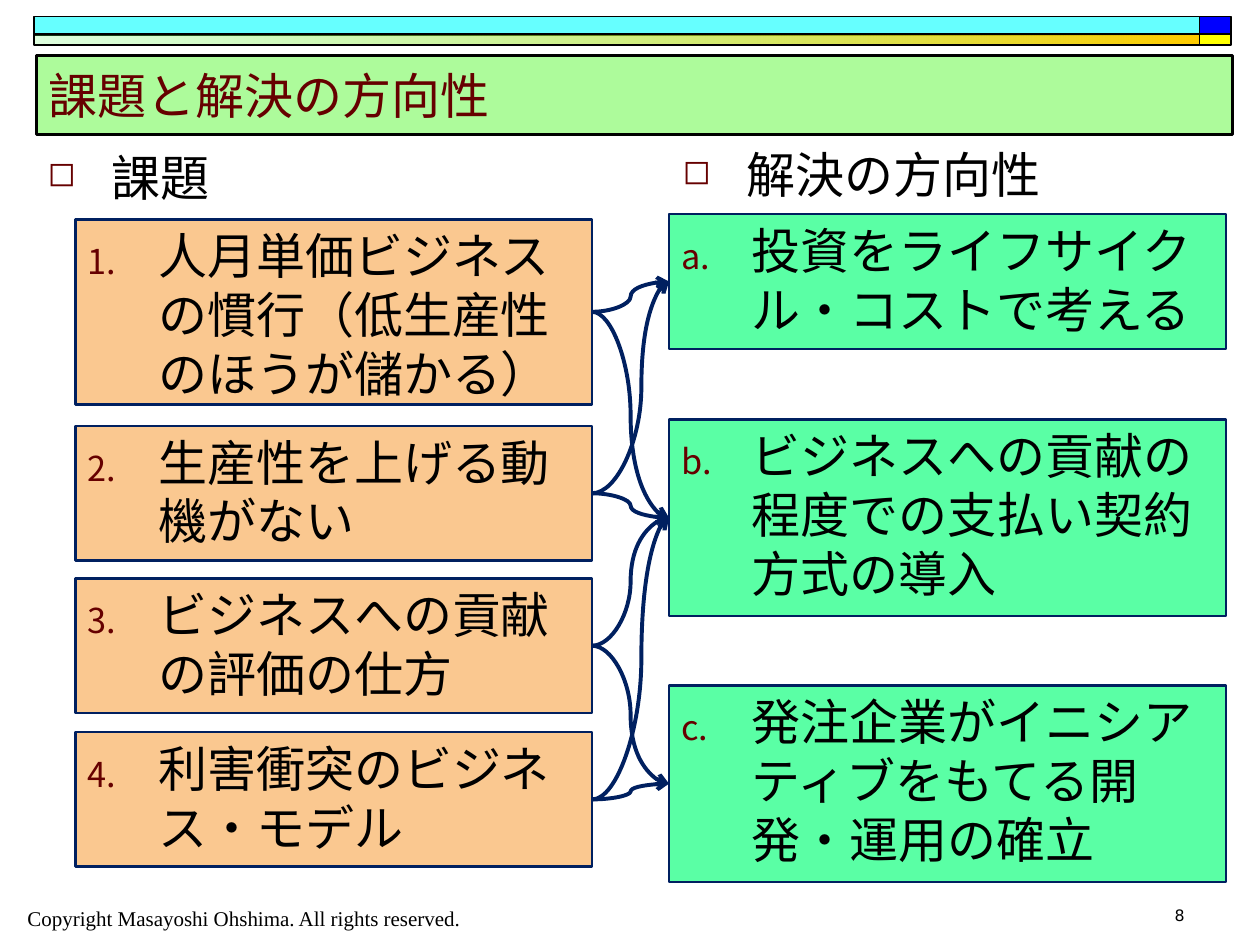
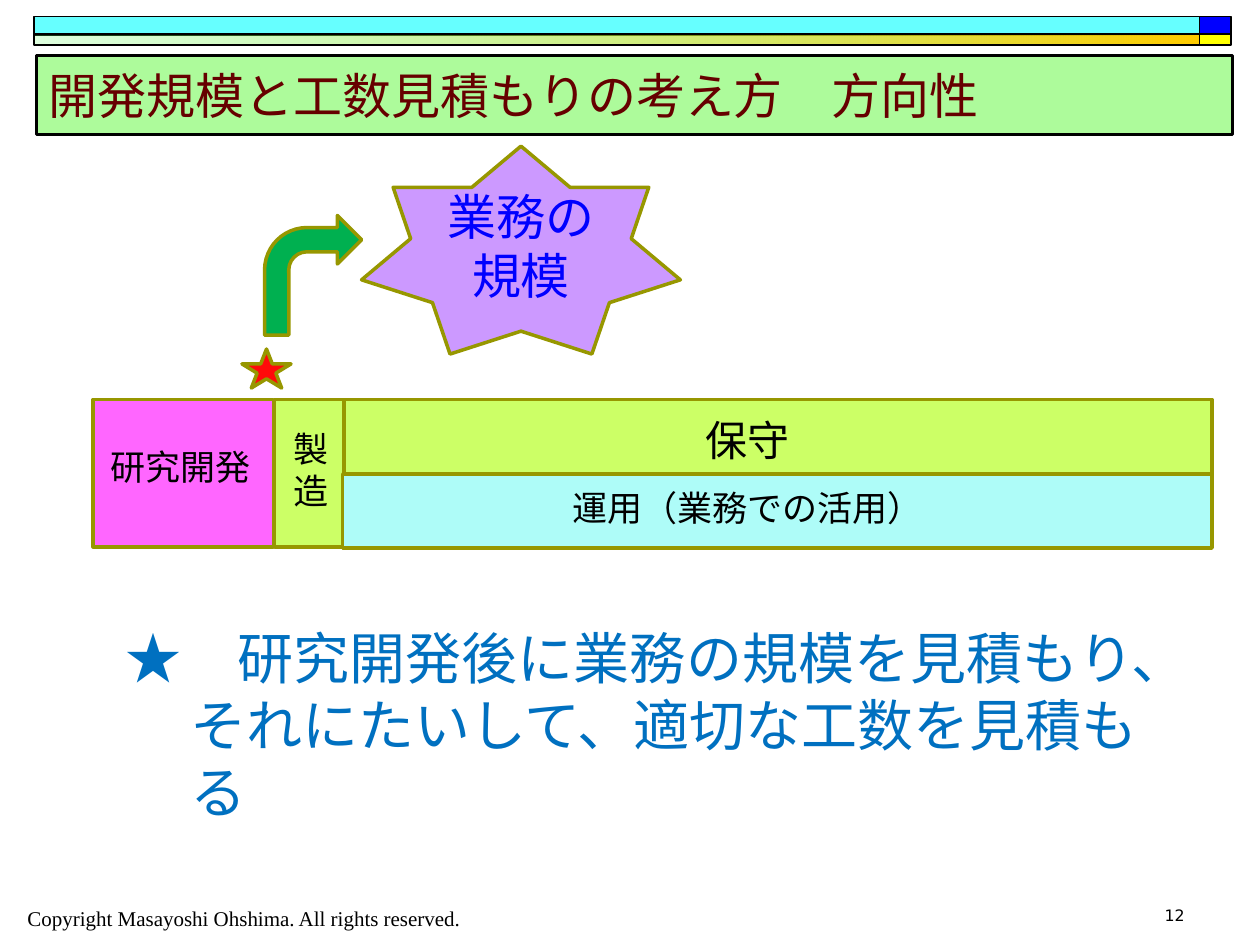
"""Build two slides on development issues and effort estimation."""
from dataclasses import dataclass

from lxml import etree
from pptx import Presentation
from pptx import util as u
from pptx.dml.color import RGBColor
from pptx.enum import shapes, text
from pptx.oxml.ns import qn

SCALE = 9144
SHAPE = shapes.MSO_SHAPE
ALIGN = text.PP_ALIGN


@dataclass(frozen=True)
class Theme:
    sans: str = "DejaVu Sans"
    serif: str = "Times New Roman"
    black: str = "000000"
    maroon: str = "660000"
    navy: str = "002060"
    olive: str = "979700"
    title_fill: str = "7EF961"
    issue: str = "F8A952"
    answer: str = "11FF7D"
    lime: str = "CCFF66"
    pink: str = "FF66FF"
    aqua: str = "AEFCF8"
    violet: str = "CC99FF"
    green: str = "00B050"
    red: str = "FF0A0A"
    blue: str = "0000FF"
    message: str = "0070C0"
    cyan: str = "66FFFF"
    yellow: str = "FFFF00"
    fade: tuple = ("66FF66", "FFCC00")
    number_size: int = 9
    footer_size: int = 12
    label_size: int = 20
    large_label_size: int = 24
    body_size: int = 28
    message_size: int = 32


def px(length):
    return u.Emu(length * SCALE)


def rgb(value):
    return RGBColor.from_string(value)


def apply(target, values):
    for name, value in values.items():
        setattr(target, name, value)


def add_xml(parent, tag, **values):
    return etree.SubElement(parent, qn(tag), {key: str(value) for key, value in values.items()})


def set_alpha(fill_xml, percent):
    add_xml(next(fill_xml.iter(qn("a:srgbClr"))), "a:alpha", val=percent * 1000)


class SlideBuilder:
    def __init__(self, theme):
        self.theme = theme
        self.deck = Presentation()
        apply(self.deck, {"slide_width": px(1000), "slide_height": px(750)})
        self.page = None

    def new_page(self, title, number):
        theme = self.theme
        self.page = self.deck.slides.add_slide(self.deck.slide_layouts[6])
        self.shape((952, 13, 25, 15), theme.blue, theme.black, 1)
        self.shape((27, 13, 925, 15), theme.cyan, theme.black, 1)
        self.fade_band((27, 27, 925, 9))
        self.shape((952, 27, 25, 9), theme.yellow, theme.black, 1)
        self.label((12, 714, 394, 24), "Copyright Masayoshi Ohshima. All rights reserved.",
                   theme.footer_size)
        self.label((742, 714, 208, 20), str(number), theme.number_size,
                   font=theme.sans, align=ALIGN.RIGHT)
        box = self.shape((29, 44, 949, 63), theme.title_fill, theme.black, 1.75, alpha=63)
        self.put_text(box, title, theme.body_size, color=theme.maroon,
                      anchor=text.MSO_ANCHOR.MIDDLE)

    def shape(self, place, fill, line, weight, kind=SHAPE.RECTANGLE, alpha=None):
        box = self.page.shapes.add_shape(kind, *map(px, place))
        box.shadow.inherit = False
        box.fill.solid()
        box.fill.fore_color.rgb = rgb(fill)
        if alpha:
            set_alpha(box.fill._xPr, alpha)
        box.line.color.rgb = rgb(line)
        box.line.width = u.Pt(weight)
        return box

    def fade_band(self, place):
        band = self.shape(place, self.theme.fade[0], self.theme.black, 1)
        band.fill.gradient()
        band.fill.gradient_angle = 0
        for stop, color, position in zip(band.fill.gradient_stops, self.theme.fade, (0, 1)):
            stop.color.rgb = rgb(color)
            stop.position = position
        set_alpha(band.fill._xPr, 21)

    def put_text(self, box, words, size, color=None, font=None, align=ALIGN.LEFT,
                 anchor=text.MSO_ANCHOR.TOP):
        apply(box.text_frame, {"word_wrap": True, "vertical_anchor": anchor})
        para = box.text_frame.paragraphs[0]
        para.alignment = align
        span = para.add_run()
        span.text = words
        apply(span.font, {"size": u.Pt(size), "name": font or self.theme.sans})
        span.font.color.rgb = rgb(color or self.theme.black)
        return para

    def label(self, place, words, size, color=None, font=None, align=ALIGN.LEFT):
        box = self.page.shapes.add_textbox(*map(px, place))
        return self.put_text(box, words, size, color, font or self.theme.serif, align)

    def hang(self, para, indent, bullet=None, **values):
        para.space_before = u.Pt(para.runs[0].font.size.pt * 0.2)
        props = para._p.get_or_add_pPr()
        props.set("marL", str(px(indent)))
        props.set("indent", str(-px(indent)))
        if bullet:
            add_xml(add_xml(props, "a:buClr"), "a:srgbClr", val=self.theme.maroon)
            add_xml(props, "a:buSzPct", val=70000)
            add_xml(props, bullet, **values)

    def heading(self, place, words):
        self.hang(self.label(place, words, self.theme.body_size), 51, "a:buChar", char="◻")

    def numbered_column(self, left, width, fill, alpha, numbering, items):
        boxes = []
        for start, (top, height, words) in enumerate(items, 1):
            box = self.shape((left, top, width, height), fill, self.theme.navy, 1.5, alpha=alpha)
            para = self.put_text(box, words, self.theme.body_size)
            self.hang(para, 56, "a:buAutoNum", type=numbering, startAt=start)
            boxes.append(box)
        return boxes

    def curve(self, source, target, bend):
        link = self.page.shapes.add_connector(shapes.MSO_CONNECTOR.CURVE, 0, 0, 0, 0)
        link.begin_connect(source, 3)
        link.end_connect(target, 1)
        link.line.color.rgb = rgb(self.theme.navy)
        link.line.width = u.Pt(2.25)
        add_xml(link.line._get_or_add_ln(), "a:tailEnd", type="arrow")
        add_xml(link._element.spPr, "a:effectLst")
        guides = link._element.spPr.find(qn("a:prstGeom")).get_or_add_avLst()
        add_xml(guides, "a:gd", name="adj1", fmla=f"val {bend * 1000}")


def build_issues(builder):
    theme = builder.theme
    builder.new_page("課題と解決の方向性", 8)
    builder.heading((28, 112, 177, 57), "課題")
    builder.heading((532, 110, 356, 57), "解決の方向性")
    issues = builder.numbered_column(60, 410, theme.issue, 64, "arabicPeriod", [
        (174, 147, "人月単価ビジネスの慣行（低生産性のほうが儲かる）"),
        (338, 107, "生産性を上げる動機がない"),
        (459, 107, "ビジネスへの貢献の評価の仕方"),
        (581, 107, "利害衝突のビジネス・モデル"),
    ])
    answers = builder.numbered_column(531, 442, theme.answer, 69, "alphaLcPeriod", [
        (170, 107, "投資をライフサイクル・コストで考える"),
        (333, 156, "ビジネスへの貢献の程度での支払い契約方式の導入"),
        (544, 156, "発注企業がイニシアティブをもてる開発・運用の確立"),
    ])
    links = [(0, 0, 50), (0, 1, 50), (1, 1, 50), (3, 2, 50),
             (3, 1, 64), (2, 1, 50), (1, 0, 64), (2, 2, 50)]
    for issue, answer, bend in links:
        builder.curve(issues[issue], answers[answer], bend)


def build_estimation(builder):
    theme = builder.theme
    builder.new_page("開発規模と工数見積もりの考え方　方向性", 12)
    message = builder.label((90, 490, 839, 134),
                            "★　研究開発後に業務の規模を見積もり、それにたいして、適切な工数を見積もる",
                            theme.message_size, theme.message)
    builder.hang(message, 51)

    burst = builder.shape((287, 116, 253, 165), theme.violet, theme.olive, 2, SHAPE.STAR_7_POINT)
    builder.put_text(burst, "業務の規模", theme.body_size, theme.blue, align=ALIGN.CENTER,
                     anchor=text.MSO_ANCHOR.MIDDLE)
    builder.shape((210, 171, 77, 95), theme.green, theme.olive, 2, SHAPE.BENT_ARROW)
    builder.shape((192, 277, 39, 31), theme.red, theme.olive, 2, SHAPE.STAR_5_POINT)

    phases = [
        ((218, 317, 55, 117), theme.lime, (223, 334, 46, 77), "製造", theme.label_size),
        ((272, 376, 690, 59), theme.aqua, (434, 381, 319, 44), "運用（業務での活用）",
         theme.label_size),
        ((74, 317, 143, 117), theme.pink, (74, 349, 138, 72), "研究開発", theme.label_size),
        ((273, 317, 689, 59), theme.lime, (503, 324, 181, 50), "保守", theme.large_label_size),
    ]
    for bar, fill, place, words, size in phases:
        builder.shape(bar, fill, theme.olive, 2)
        builder.label(place, words, size, align=ALIGN.CENTER)


def main():
    builder = SlideBuilder(Theme())
    build_issues(builder)
    build_estimation(builder)
    builder.deck.save("out.pptx")


if __name__ == "__main__":
    main()
